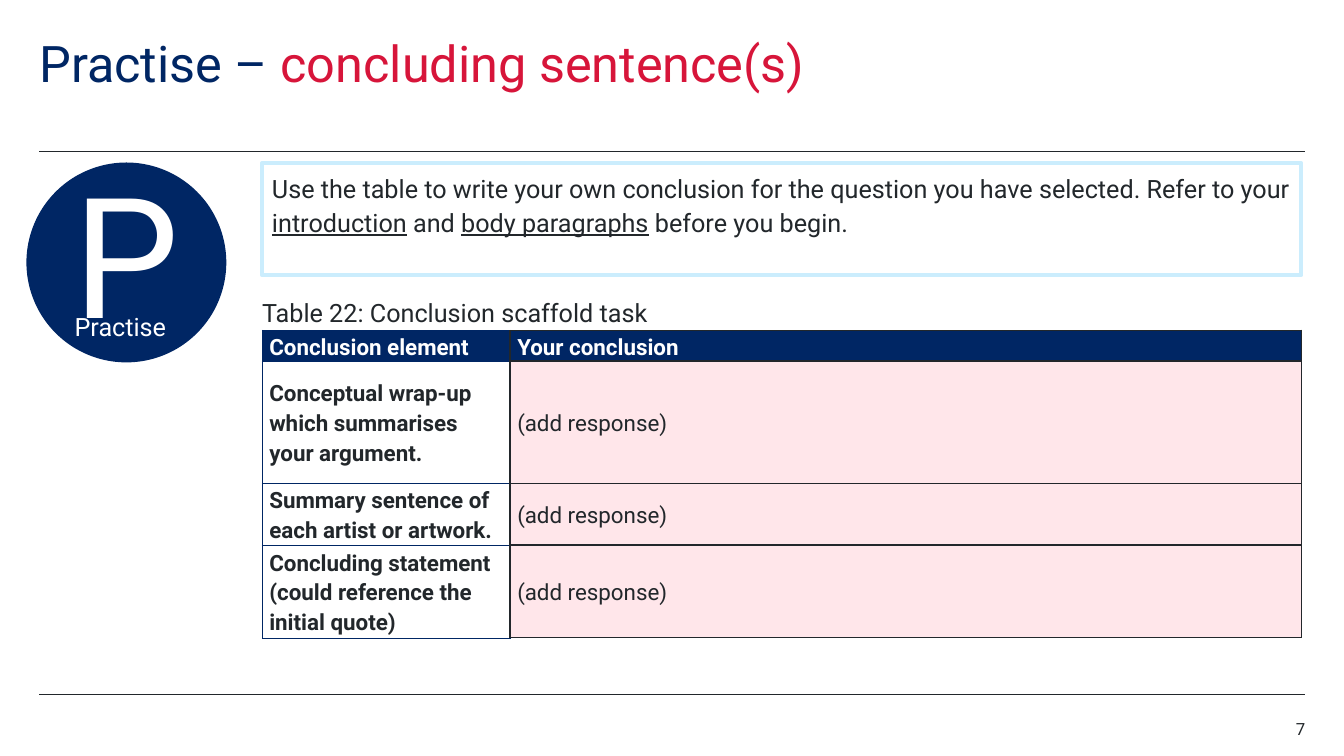
from dataclasses import dataclass
from typing import Optional

from lxml.etree import SubElement
from pptx import Presentation
from pptx.dml.color import RGBColor
from pptx.enum.shapes import MSO_CONNECTOR, MSO_SHAPE
from pptx.enum.text import MSO_ANCHOR, PP_ALIGN
from pptx.oxml.ns import qn
from pptx.util import Pt


@dataclass(frozen=True)
class Theme:
    font: str = "Roboto"
    navy: str = "002664"
    red: str = "D7153A"
    ink: str = "22272B"
    white: str = "FFFFFF"
    sky: str = "CBEDFD"
    pink: str = "FFE6EA"
    title: float = 36
    letter: float = 120
    body: float = 18
    cell: float = 16
    small: float = 12


@dataclass(frozen=True)
class Box:
    left: float
    top: float
    width: float
    height: float

    def emu(self) -> tuple:
        return Pt(self.left), Pt(self.top), Pt(self.width), Pt(self.height)


@dataclass(frozen=True)
class Span:
    text: str
    color: str
    under: Optional[bool] = None
    bold: Optional[bool] = None


@dataclass(frozen=True)
class Label:
    box: Box
    spans: tuple
    size: float
    align: PP_ALIGN = PP_ALIGN.LEFT
    pitch: float = 1.0


THEME = Theme()
LEFT, RIGHT = 28.1, 932.4
PANEL, SPAN = 187.2, 742.3
RULES = (108, 496.1)
COLS = (177.1, 565.2)
HEIGHTS = (22, 87.2, 43.8, 66.4)
DISC = Box(19.4, 116.6, 141.8, 141.8)
TASK = Box(PANEL, 116.6, SPAN, 79.9)
GRID = Box(PANEL, 235.8, SPAN, sum(HEIGHTS))

LABELS = (
    Label(Box(LEFT, 28.1, 793.4, 79.2),
          (Span("Practise – ", THEME.navy), Span("concluding sentence(s)", THEME.red)),
          THEME.title, pitch=0.9),
    Label(Box(53.3, 222.5, 74.2, 34.6), (Span("Practise", THEME.white),), THEME.body),
    Label(Box(PANEL, 209.5, 578, 23),
          (Span("Table 22: Conclusion scaffold task", THEME.ink),), THEME.body, pitch=1.14),
    Label(Box(RIGHT - 56.9, 513.4, 56.9, 14.4), (Span("7", THEME.ink),),
          THEME.small, PP_ALIGN.RIGHT),
)
BRIEF = (
    Span("Use the table to write your own conclusion for the question you have "
         "selected. Refer to your ", THEME.ink),
    Span("introduction", THEME.ink, under=True),
    Span(" and ", THEME.ink),
    Span("body paragraphs", THEME.ink, under=True),
    Span(" before you begin.", THEME.ink),
)
ROWS = (
    ("Conclusion element", "Your conclusion"),
    ("Conceptual wrap-up which summarises your argument.", "(add response)"),
    ("Summary sentence of each artist or artwork.", "(add response)"),
    ("Concluding statement (could reference the initial quote)", "(add response)"),
)


def write(frame, spans: tuple, size: float, align=PP_ALIGN.LEFT, pitch: float = 1.0) -> None:
    frame.word_wrap = True
    para = frame.paragraphs[0]
    para.alignment, para.line_spacing = align, pitch
    for span in spans:
        run = para.add_run()
        run.text = span.text
        font = run.font
        font.name, font.size = THEME.font, Pt(size)
        font.color.rgb = RGBColor.from_string(span.color)
        font.underline, font.bold = span.under, span.bold


def inset(item, left: float, top: float, right: float, bottom: float) -> None:
    item.margin_left, item.margin_top = Pt(left), Pt(top)
    item.margin_right, item.margin_bottom = Pt(right), Pt(bottom)


def add_rule(slide, top: float) -> None:
    rule = slide.shapes.add_connector(
        MSO_CONNECTOR.STRAIGHT, Pt(LEFT), Pt(top), Pt(RIGHT), Pt(top))
    rule.line.color.rgb = RGBColor.from_string(THEME.ink)
    rule.line.width = Pt(0.5)
    SubElement(rule._element.spPr, qn("a:effectLst"))


def add_label(slide, label: Label) -> None:
    frame = slide.shapes.add_textbox(*label.box.emu()).text_frame
    inset(frame, 0, 0, 0, 0)
    write(frame, label.spans, label.size, label.align, label.pitch)


def add_panel(slide, kind: MSO_SHAPE, box: Box, fill: str, line: str, width: float):
    shape = slide.shapes.add_shape(kind, *box.emu())
    shape.shadow.inherit = False
    shape.fill.solid()
    shape.fill.fore_color.rgb = RGBColor.from_string(fill)
    shape.line.color.rgb = RGBColor.from_string(line)
    shape.line.width = Pt(width)
    return shape.text_frame


def add_edge(cell, side: str, color: str, width: float) -> None:
    """Draw one cell border; side is L, R, T or B, called in that order."""
    edge = SubElement(cell._tc.get_or_add_tcPr(), qn(f"a:ln{side}"), w=str(Pt(width)))
    SubElement(SubElement(edge, qn("a:solidFill")), qn("a:srgbClr"), val=color)


def fill_cell(cell, text: str, head: bool, first: bool) -> None:
    color = THEME.white if head else THEME.ink
    write(cell.text_frame, (Span(text, color, bold=head or first),), THEME.cell, pitch=1.15)
    cell.vertical_anchor = MSO_ANCHOR.MIDDLE
    inset(cell, 5.2, 0, 5.2, 0)
    for side in "LRTB":
        thin = first and side != "R"
        add_edge(cell, side, THEME.navy if thin else THEME.ink, 0.5 if thin else 1)
    back = THEME.navy if head else THEME.white if first else THEME.pink
    cell.fill.solid()
    cell.fill.fore_color.rgb = RGBColor.from_string(back)


def add_grid(slide) -> None:
    table = slide.shapes.add_table(len(ROWS), len(COLS), *GRID.emu()).table
    table.horz_banding = False
    for col, width in zip(table.columns, COLS):
        col.width = Pt(width)
    for r, (texts, height) in enumerate(zip(ROWS, HEIGHTS)):
        table.rows[r].height = Pt(height)
        for c, text in enumerate(texts):
            fill_cell(table.cell(r, c), text, r == 0, c == 0)


def main() -> None:
    deck = Presentation()
    deck.slide_width, deck.slide_height = Pt(960), Pt(540)
    slide = deck.slides.add_slide(deck.slide_layouts[6])
    for top in RULES:
        add_rule(slide, top)

    disc = add_panel(slide, MSO_SHAPE.OVAL, DISC, THEME.navy, THEME.navy, 1)
    inset(disc, 0, 0, 0, 16)
    disc.vertical_anchor = MSO_ANCHOR.MIDDLE
    write(disc, (Span("P", THEME.white),), THEME.letter, PP_ALIGN.CENTER)

    task = add_panel(slide, MSO_SHAPE.RECTANGLE, TASK, THEME.white, THEME.sky, 3)
    inset(task, 7.2, 3.9, 7.2, 3.6)
    task.vertical_anchor = MSO_ANCHOR.TOP
    write(task, BRIEF, THEME.body, pitch=1.14)

    for label in LABELS:
        add_label(slide, label)
    add_grid(slide)
    deck.save("out.pptx")


if __name__ == "__main__":
    main()
